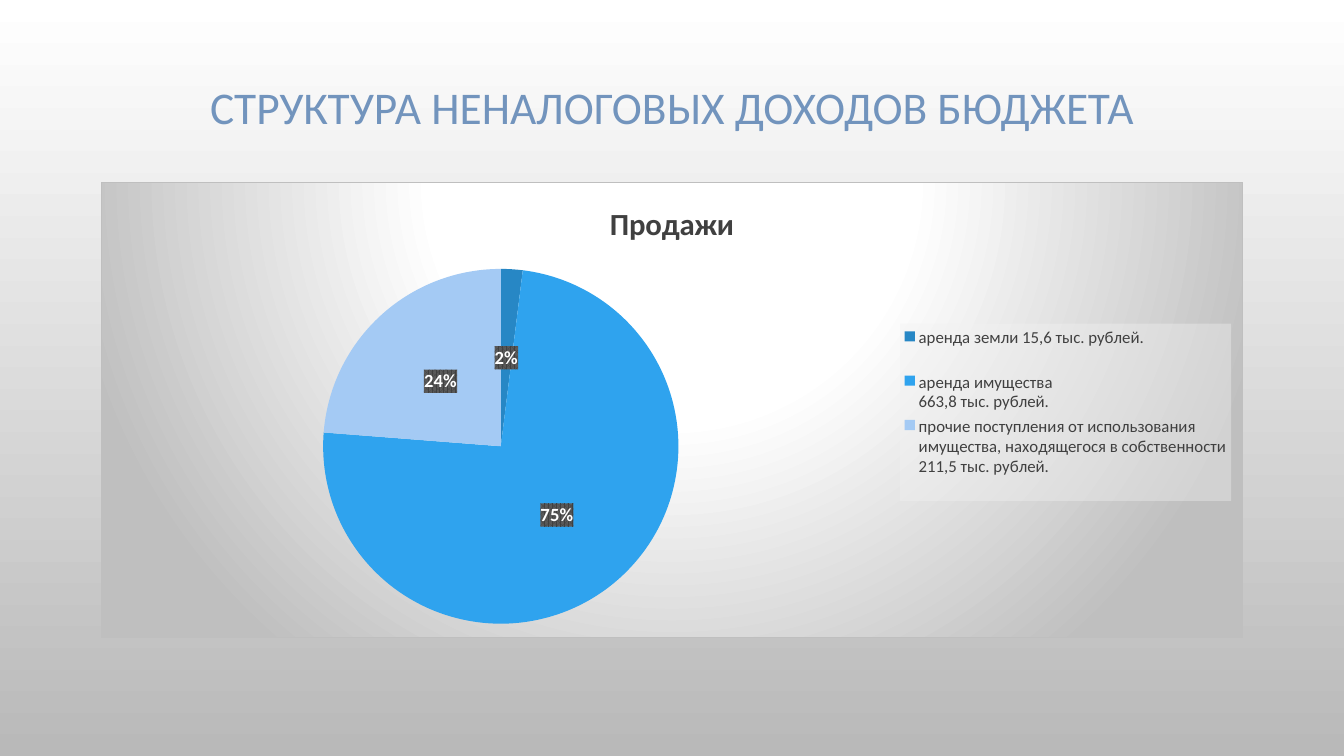
import lxml.etree
import pptx
import pptx.chart.data
import pptx.dml.color
import pptx.enum.chart
import pptx.enum.text
import pptx.oxml
import pptx.util

PX = 914400 / 100.8
NAMESPACES = (
    'xmlns:c="http://schemas.openxmlformats.org/drawingml/2006/chart" '
    'xmlns:a="http://schemas.openxmlformats.org/drawingml/2006/main"'
)


def color(hex_code):
    return pptx.dml.color.RGBColor.from_string(hex_code)


def chart_element(tag, content):
    """Build a chart-namespace element around the given XML content."""
    return pptx.oxml.parse_xml(f"<c:{tag} {NAMESPACES}>{content}</c:{tag}>")


presentation = pptx.Presentation()
presentation.slide_width = round(1344 * PX)
presentation.slide_height = round(756 * PX)
slide = presentation.slides.add_slide(presentation.slide_layouts[5])

backdrop = slide.background.fill
backdrop.gradient()
backdrop.gradient_angle = 270
for stop, (position, shade) in zip(backdrop.gradient_stops, [(0, "FFFFFF"), (1, "B9B9B9")]):
    stop.position = position
    stop.color.rgb = color(shade)

# Heading
heading = slide.shapes.title
heading.left, heading.top, heading.width, heading.height = (
    round(n * PX) for n in (101, 104, 1142, 66)
)
heading_text = heading.text_frame
heading_text.text = "СТРУКТУРА НЕНАЛОГОВЫХ ДОХОДОВ БЮДЖЕТА\v"
heading_text.word_wrap = True
heading_text.auto_size = pptx.enum.text.MSO_AUTO_SIZE.NONE
heading_text.vertical_anchor = pptx.enum.text.MSO_ANCHOR.MIDDLE
heading_line = heading_text.paragraphs[0]
heading_line.alignment = pptx.enum.text.PP_ALIGN.CENTER
heading_line.line_spacing = 0.9

# Revenue shares
revenue = [
    ("аренда земли 15,6 тыс. рублей.\n", 2, "2787C5"),
    ("аренда имущества\n663,8 тыс. рублей.", 75, "2FA3EE"),
    (
        "прочие поступления от использования имущества, "
        "находящегося в собственности 211,5 тыс. рублей.\n",
        24,
        "A4CAF4",
    ),
]
shares = pptx.chart.data.CategoryChartData()
shares.categories = [source for source, share, shade in revenue]
shares.add_series("Продажи", [share for source, share, shade in revenue])
chart = slide.shapes.add_chart(
    pptx.enum.chart.XL_CHART_TYPE.PIE,
    *(round(n * PX) for n in (101, 182, 1142, 456)),
    shares,
).chart

chart.has_title = True
chart.chart_title.include_in_layout = False
chart.chart_title.text_frame.text = "Продажи"
chart_heading = chart.chart_title.text_frame.paragraphs[0].runs[0]

chart.has_legend = True
legend = chart.legend
legend.position = pptx.enum.chart.XL_LEGEND_POSITION.RIGHT
legend.include_in_layout = False

pie = chart.plots[0]
pie.vary_by_categories = True
for index, (source, share, shade) in enumerate(revenue):
    slice_fill = pie.series[0].points[index].format.fill
    slice_fill.solid()
    slice_fill.fore_color.rgb = color(shade)

labels = pie.series[0].data_labels
labels.show_value = True
labels.number_format = '0"%"'
labels.number_format_is_linked = False
labels.position = pptx.enum.chart.XL_LABEL_POSITION.CENTER

# Fonts
for font, size, bold, shade in [
    (heading_line.runs[0].font, 32.4, False, "7294BD"),
    (heading_line.font, 32.4, False, "7294BD"),
    (chart.font, 10, False, "000000"),
    (chart_heading.font, 22, True, "404040"),
    (legend.font, 12, False, "404040"),
    (labels.font, 13.3, True, "FFFFFF"),
]:
    for attribute, value in {
        "name": "Calibri", "size": pptx.util.Pt(size), "bold": bold,
    }.items():
        setattr(font, attribute, value)
    font.color.rgb = color(shade)

# Fills of the chart area, legend and labels
chart_stops = "".join(
    f'<a:gs pos="{position}000"><a:srgbClr val="{shade}"/></a:gs>'
    for position, shade in [(0, "FFFFFF"), (39, "FFFFFF"), (100, "BFBFBF")]
)
chart_fill = (
    f'<a:gradFill><a:gsLst>{chart_stops}</a:gsLst><a:path path="circle">'
    '<a:fillToRect l="50000" t="-80000" r="50000" b="180000"/></a:path></a:gradFill>'
    '<a:ln w="9525"><a:solidFill><a:srgbClr val="BFBFBF"/></a:solidFill></a:ln>'
)
legend_fill = (
    '<a:solidFill><a:srgbClr val="F2F2F2"><a:alpha val="39000"/></a:srgbClr></a:solidFill>'
)
label_fill = (
    '<a:pattFill prst="pct75"><a:fgClr><a:srgbClr val="404040"/></a:fgClr>'
    '<a:bgClr><a:srgbClr val="595959"/></a:bgClr></a:pattFill>'
)
chart_space = chart.element
legend_part = chart_space.xpath(".//c:legend")[0]
for predecessor, fill in [
    (chart_space.xpath("./c:chart")[0], chart_fill),
    (legend_part.xpath("./c:overlay")[0], legend_fill),
    (chart_space.xpath(".//c:ser/c:dLbls/c:numFmt")[0], label_fill),
]:
    predecessor.addnext(chart_element("spPr", fill))

# Places of the pie and legend, as shares of the chart area
for part, target, place in [
    (chart_space.xpath(".//c:plotArea")[0], '<c:layoutTarget val="inner"/>', (0.19, 0.19, 0.32, 0.78)),
    (legend_part, "", (0.7, 0.31, 0.29, 0.39)),
]:
    for old_layout in part.xpath("./c:layout"):
        part.remove(old_layout)
    modes = '<c:xMode val="edge"/><c:yMode val="edge"/>'
    sides = "".join(f'<c:{side} val="{n}"/>' for side, n in zip("xywh", place))
    layout = chart_element("layout", f"<c:manualLayout>{target}{modes}{sides}</c:manualLayout>")
    part.insert(1 if part is legend_part else 0, layout)

presentation.save("out.pptx")
